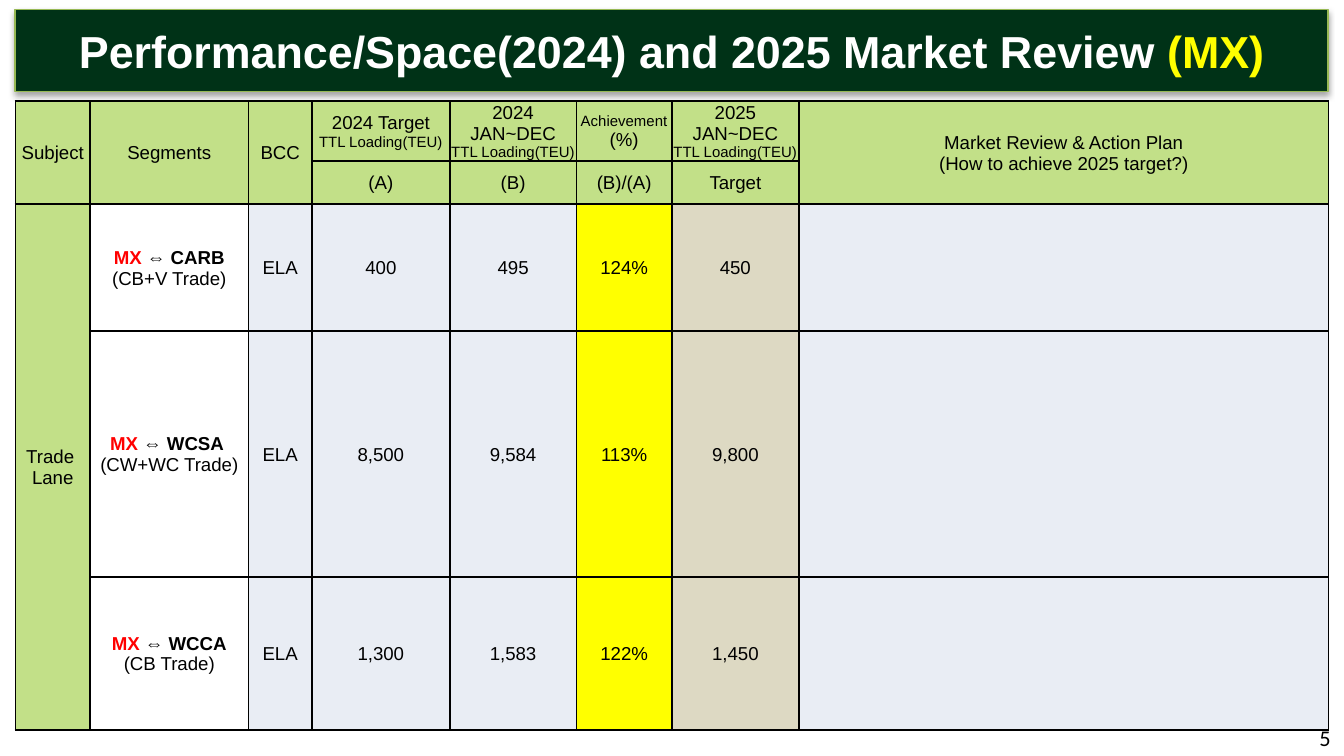
"""Builds the 2024 performance and 2025 market review slide."""
from dataclasses import dataclass

from lxml.etree import SubElement
from pptx import Presentation
from pptx.dml.color import RGBColor
from pptx.enum.shapes import MSO_SHAPE
from pptx.enum.text import MSO_ANCHOR, PP_ALIGN
from pptx.oxml.ns import qn
from pptx.util import Pt

COLORS = {
    "black": "000000", "white": "FFFFFF", "red": "FF0000", "yellow": "FFFF00",
    "banner": "003217", "banner_line": "98B955",
    "header": "C2E088", "data": "E9EDF4", "target": "DDD9C3",
}
COLUMN_WIDTHS = [39.9, 84.9, 34, 73.9, 67.8, 51.2, 68, 283.7]
ROW_HEIGHTS = [32, 22.8, 68.1, 131.8, 81.9]
DATA_FILLS = ["header", "white", "data", "data", "data", "yellow", "target", "data"]
MERGES = [(0, 0, 1, 0), (0, 1, 1, 1), (0, 2, 1, 2), (0, 7, 1, 7), (2, 0, 4, 0)]
CELL_FORMAT = {
    "margin_left": Pt(0.72), "margin_top": Pt(0.72), "margin_right": Pt(0.72),
    "margin_bottom": Pt(0), "vertical_anchor": MSO_ANCHOR.MIDDLE,
}


@dataclass
class Piece:
    text: str
    size: float = 10
    color: str = "black"
    bold: bool = False
    font: str = "Arial"


@dataclass
class Lane:
    name: str
    trade: str
    values: list[str]


LANES = [
    Lane("CARB", "(CB+V Trade)", ["400", "495", "124%", "450"]),
    Lane("WCSA ", "(CW+WC Trade)", ["8,500", "9,584", "113%", "9,800"]),
    Lane("WCCA", "(CB Trade)", ["1,300", "1,583", "122%", "1,450"]),
]
LOADING = [Piece("TTL Loading(TEU)", 8)]
HEADINGS = {
    (0, 0): [[Piece("Subject")]],
    (0, 1): [[Piece("Segments")]],
    (0, 2): [[Piece("BCC")]],
    (0, 3): [[Piece("2024 Target")], LOADING],
    (0, 4): [[Piece("2024 JAN~DEC")], LOADING],
    (0, 5): [[Piece("Achievement", 8)], [Piece("(%)")]],
    (0, 6): [[Piece("2025 JAN~DEC")], LOADING],
    (0, 7): [[Piece("Market Review & Action Plan")],
             [Piece("(How to achieve 2025 target?)")]],
    (1, 3): [[Piece("(A)")]],
    (1, 4): [[Piece("(B)")]],
    (1, 5): [[Piece("(B)/(A)")]],
    (1, 6): [[Piece("Target")]],
    (2, 0): [[Piece("Trade ")], [Piece("Lane")]],
}


def rgb(name: str) -> RGBColor:
    return RGBColor.from_string(COLORS[name])


def set_format(target, values: dict) -> None:
    for name, value in values.items():
        setattr(target, name, value)


def write(text_frame, lines: list[list[Piece]], alignment=PP_ALIGN.CENTER) -> None:
    for index, pieces in enumerate(lines):
        paragraph = text_frame.add_paragraph() if index else text_frame.paragraphs[0]
        paragraph.alignment = alignment
        for piece in pieces:
            run = paragraph.add_run()
            run.text = piece.text
            set_format(run.font, {"size": Pt(piece.size), "bold": piece.bold,
                                  "name": piece.font})
            run.font.color.rgb = rgb(piece.color)


def add_color(parent, name: str):
    fill = SubElement(parent, qn("a:solidFill"))
    return SubElement(fill, qn("a:srgbClr"), val=COLORS[name])


def style_cell(cell, fill: str) -> None:
    set_format(cell, CELL_FORMAT)
    properties = cell._tc.get_or_add_tcPr()
    for side in ("a:lnL", "a:lnR", "a:lnT", "a:lnB"):
        add_color(SubElement(properties, qn(side), w=str(Pt(1))), "black")
    cell.fill.solid()
    cell.fill.fore_color.rgb = rgb(fill)


def lane_cells(row: int, lane: Lane) -> dict:
    segment = [[Piece("MX ", color="red", bold=True),
                Piece(f"⇔ {lane.name}", bold=True)], [Piece(lane.trade)]]
    cells = {(row, 1): segment}
    for column, value in enumerate(["ELA", *lane.values], 2):
        cells[row, column] = [[Piece(value)]]
    return cells


def add_review_table(slide) -> None:
    table = slide.shapes.add_table(
        len(ROW_HEIGHTS), len(COLUMN_WIDTHS), Pt(8.3), Pt(54.1),
        Pt(sum(COLUMN_WIDTHS)), Pt(sum(ROW_HEIGHTS))).table
    set_format(table, {"first_row": False, "horz_banding": False})
    for column, width in zip(table.columns, COLUMN_WIDTHS):
        column.width = Pt(width)
    for row, height in zip(table.rows, ROW_HEIGHTS):
        row.height = Pt(height)
    for row in range(len(ROW_HEIGHTS)):
        for column, fill in enumerate(DATA_FILLS):
            style_cell(table.cell(row, column), "header" if row < 2 else fill)
    for top, left, bottom, right in MERGES:
        table.cell(top, left).merge(table.cell(bottom, right))
    contents = dict(HEADINGS)
    for row, lane in enumerate(LANES, 2):
        contents.update(lane_cells(row, lane))
    for (row, column), lines in contents.items():
        write(table.cell(row, column).text_frame, lines)


def add_banner(slide) -> None:
    banner = slide.shapes.add_shape(
        MSO_SHAPE.RECTANGLE, Pt(8.1), Pt(5.1), Pt(703.4), Pt(43.9))
    banner.shadow.inherit = False
    banner.fill.solid()
    banner.fill.fore_color.rgb = rgb("banner")
    banner.line.color.rgb = rgb("banner_line")
    banner.line.width = Pt(0.75)
    effects = banner._element.spPr.find(qn("a:effectLst"))
    shadow = SubElement(effects, qn("a:outerShdw"), blurRad=str(Pt(3.1)),
                        dist=str(Pt(1.8)), dir="5400000", rotWithShape="0")
    SubElement(add_shadow_color(shadow), qn("a:alpha"), val="35000")
    set_format(banner.text_frame, {"word_wrap": True,
                                   "vertical_anchor": MSO_ANCHOR.MIDDLE})
    write(banner.text_frame, [[
        Piece("Performance/Space(2024) and 2025 Market Review ", 24, "white", True),
        Piece("(MX)", 24, "yellow", True)]])


def add_shadow_color(shadow):
    return SubElement(shadow, qn("a:srgbClr"), val=COLORS["black"])


def add_page_number(slide) -> None:
    box = slide.shapes.add_textbox(Pt(552.2), Pt(384.5), Pt(167.8), Pt(21.6))
    box.text_frame.word_wrap = True
    write(box.text_frame, [[Piece("5", 12, font="Calibri")]], PP_ALIGN.RIGHT)


def main() -> None:
    presentation = Presentation()
    set_format(presentation, {"slide_width": Pt(720), "slide_height": Pt(405)})
    slide = presentation.slides.add_slide(presentation.slide_layouts[6])
    add_review_table(slide)
    add_banner(slide)
    add_page_number(slide)
    presentation.save("out.pptx")


if __name__ == "__main__":
    main()
